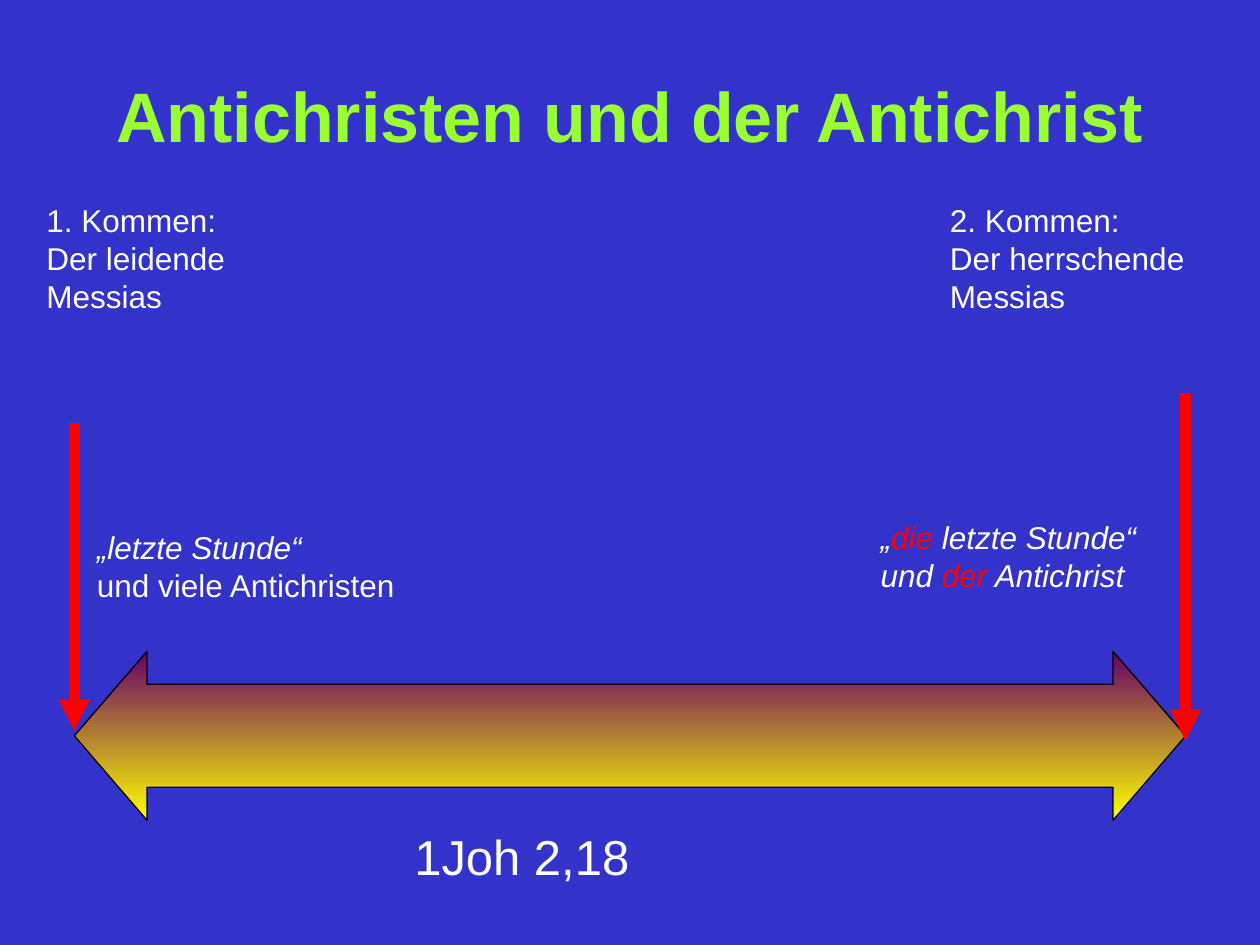
from dataclasses import dataclass

from lxml import etree
from pptx import Presentation
from pptx.dml.color import RGBColor
from pptx.enum.shapes import MSO_CONNECTOR, MSO_SHAPE
from pptx.enum.text import MSO_ANCHOR, PP_ALIGN
from pptx.oxml.ns import qn
from pptx.util import Inches, Pt

STRAIGHT = MSO_CONNECTOR.STRAIGHT
DOUBLE_ARROW = MSO_SHAPE.LEFT_RIGHT_ARROW
LEFT, CENTER = PP_ALIGN.LEFT, PP_ALIGN.CENTER
TOP, MIDDLE = MSO_ANCHOR.TOP, MSO_ANCHOR.MIDDLE

CELL = 0.5  # inches: the slide is a grid of 20 columns by 15 rows
COLUMNS, ROWS = 20, 15


@dataclass(frozen=True)
class Theme:
    font: str = "Arial"
    background: str = "3333CC"
    title: str = "99FF33"
    text: str = "FFFFFF"
    accent: str = "FF0000"
    outline: str = "000000"
    gradient: tuple = ("660066", "FFFF00")
    title_size: int = 40
    reference_size: int = 28
    body_size: int = 18


THEME = Theme()


def grid(*cells):
    return [Inches(cell * CELL) for cell in cells]


def rgb(color):
    return RGBColor.from_string(color)


def add_run(paragraph, text, size=THEME.body_size, color=THEME.text,
            bold=False, italic=False):
    run = paragraph.add_run()
    run.text = text
    font = run.font
    font.name, font.size = THEME.font, Pt(size)
    font.bold, font.italic = bold, italic
    font.color.rgb = rgb(color)


class TimelineSlide:
    def __init__(self, presentation, theme):
        self.theme = theme
        self.slide = presentation.slides.add_slide(presentation.slide_layouts[6])
        fill = self.slide.background.fill
        fill.solid()
        fill.fore_color.rgb = rgb(theme.background)

    def text(self, box, lines, wrap=True, align=LEFT, anchor=TOP, **style):
        """Each line is a string or a list of (text, own style) runs."""
        frame = self.slide.shapes.add_textbox(*grid(*box)).text_frame
        frame.word_wrap = wrap
        frame.vertical_anchor = anchor
        for index, line in enumerate(lines):
            paragraph = frame.add_paragraph() if index else frame.paragraphs[0]
            paragraph.alignment = align
            runs = [(line, {})] if isinstance(line, str) else line
            for text, own_style in runs:
                add_run(paragraph, text, **{**style, **own_style})

    def double_arrow(self, box, shaft, head):
        shape = self.slide.shapes.add_shape(DOUBLE_ARROW, *grid(*box))
        shape.shadow.inherit = False
        shape.adjustments[0], shape.adjustments[1] = shaft, head
        shape.fill.gradient()
        shape.fill.gradient_angle = 270
        for stop, color in zip(shape.fill.gradient_stops, self.theme.gradient):
            stop.color.rgb = rgb(color)
        shape.line.color.rgb = rgb(self.theme.outline)
        shape.line.width = Pt(0.75)

    def down_arrow(self, column, start, end):
        connector = self.slide.shapes.add_connector(
            STRAIGHT, *grid(column, start, column, end))
        connector.line.color.rgb = rgb(self.theme.accent)
        connector.line.width = Pt(6)
        properties = connector.element.spPr
        etree.SubElement(properties.find(qn("a:ln")), qn("a:tailEnd"),
                         type="triangle")
        etree.SubElement(properties, qn("a:effectLst"))


def main():
    presentation = Presentation()
    presentation.slide_width, presentation.slide_height = grid(COLUMNS, ROWS)
    page = TimelineSlide(presentation, THEME)
    emphasis = {"color": THEME.accent}

    # Time span between the two comings
    first, second = 1.18, COLUMNS - 1.18
    page.double_arrow((first, 10.34, second - first, 2.68),
                      shaft=0.61, head=0.43)
    page.down_arrow(first, 6.72, 11.6)
    page.down_arrow(second, 6.24, 11.76)

    # The two comings
    page.text((0.54, 3.1, 8.9, 2.6),
              ["1. Kommen:", "Der leidende", "Messias"])
    page.text((14.88, 3.1, 5.12, 2.6),
              ["2. Kommen:", "Der herrschende", "Messias"])

    # Title
    page.text((0, 0.56, COLUMNS, 2.5), ["Antichristen und der Antichrist"],
              align=CENTER, anchor=MIDDLE, size=THEME.title_size,
              color=THEME.title, bold=True)

    # Captions above the time span
    page.text((1.34, 8.28, 5.18, 1.42),
              [[("„letzte Stunde“", {"italic": True})],
               "und viele Antichristen"], wrap=False)
    page.text((13.78, 8.12, 4.5, 1.42),
              [[("„", {}), ("die", emphasis), (" letzte Stunde“", {})],
               [("und ", {}), ("der", emphasis), (" Antichrist", {})]],
              wrap=False, italic=True)

    # Bible reference
    page.text((6.38, 13.02, 3.86, 1.14), ["1Joh 2,18"], wrap=False,
              size=THEME.reference_size)

    presentation.save("out.pptx")


if __name__ == "__main__":
    main()
